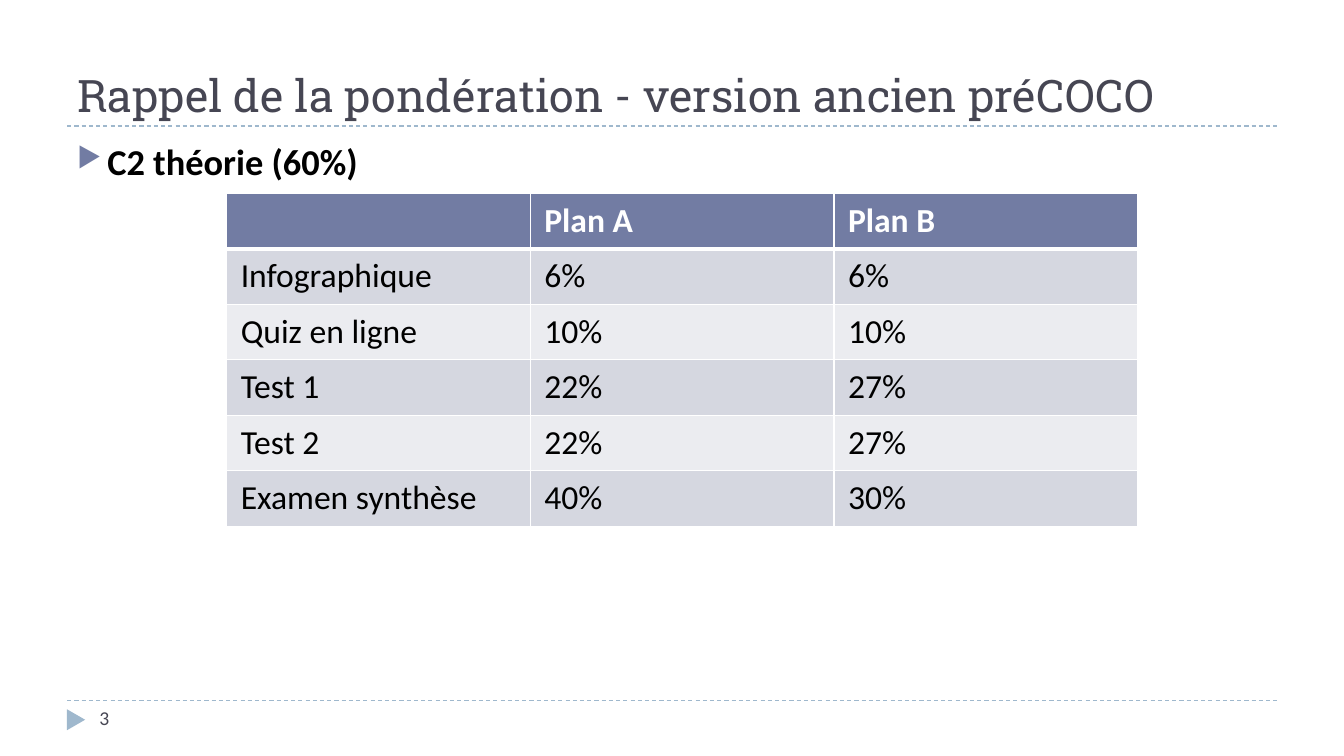
"""Builds the slide that recalls the weighting of the course grades."""
import pptx
import pptx.dml.color
import pptx.enum.dml
import pptx.enum.shapes
import pptx.enum.text
import pptx.oxml
import pptx.oxml.ns
import pptx.util

Pt = pptx.util.Pt

TITLE = "Rappel de la pondération - version ancien préCOCO"
HEADING = "C2 théorie (60%)"
PAGE_NUMBER = "3"
WEIGHTS = [
    ("", "Plan A", "Plan B"),
    ("Infographique", "6%", "6%"),
    ("Quiz en ligne", "10%", "10%"),
    ("Test 1", "22%", "27%"),
    ("Test 2", "22%", "27%"),
    ("Examen synthèse", "40%", "30%"),
]

WIDTH, HEIGHT = 960, 540
MARGIN = 48
RULE_TOPS = (90, 500.4)
TABLE_LEFT, TABLE_TOP = 162, 138.24
COLUMN_WIDTH, ROW_HEIGHT = 216.9, 39.6
INK, ACCENT, PALE_BLUE, WHITE, BLACK = "464653", "727CA3", "9FB8CD", "FFFFFF", "000000"
BANDS = ("EBECF0", "D5D7E0")
NAMESPACE = pptx.oxml.ns.nsdecls("a")


def paint(target, color):
    target.solid()
    target.fore_color.rgb = pptx.dml.color.RGBColor.from_string(color)


def write(para, text, size, color, font="Calibri", bold=False):
    span = para.add_run()
    span.text = text
    span.font.name, span.font.size, span.font.bold = font, Pt(size), bold
    paint(span.font.fill, color)


def add_text(page, left, top, width, height, anchor="TOP"):
    box = page.shapes.add_textbox(Pt(left), Pt(top), Pt(width), Pt(height))
    box.text_frame.word_wrap = True
    box.text_frame.vertical_anchor = pptx.enum.text.MSO_ANCHOR[anchor]
    return box.text_frame.paragraphs[0]


def add_rule(page, top):
    rule = page.shapes.add_connector(
        pptx.enum.shapes.MSO_CONNECTOR.STRAIGHT, Pt(MARGIN), Pt(top), Pt(WIDTH - MARGIN), Pt(top))
    paint(rule.line.fill, PALE_BLUE)
    rule.line.width = Pt(0.75)
    rule.line.dash_style = pptx.enum.dml.MSO_LINE.DASH
    rule._element.spPr.append(pptx.oxml.parse_xml(f"<a:effectLst {NAMESPACE}/>"))


def add_bullet(para):
    para.space_before = Pt(6)
    properties = para._p.get_or_add_pPr()
    properties.set("marL", str(Pt(21.6)))
    properties.set("indent", str(-Pt(21.6)))
    for markup in (
        f'<a:buClr {NAMESPACE}><a:srgbClr val="{ACCENT}"/></a:buClr>',
        f'<a:buSzPct {NAMESPACE} val="76000"/>',
        f'<a:buChar {NAMESPACE} char="▶"/>',
    ):
        properties.append(pptx.oxml.parse_xml(markup))


def add_borders(cell, bottom):
    properties = cell._tc.get_or_add_tcPr()
    for place, (side, width) in enumerate(zip("LRTB", (1, 1, 1, bottom))):
        properties.insert(place, pptx.oxml.parse_xml(
            f'<a:ln{side} {NAMESPACE} w="{Pt(width)}"><a:solidFill>'
            f'<a:srgbClr val="{WHITE}"/></a:solidFill></a:ln{side}>'))


def add_weights(page):
    rows, columns = len(WEIGHTS), len(WEIGHTS[0])
    table = page.shapes.add_table(
        rows, columns, Pt(TABLE_LEFT), Pt(TABLE_TOP),
        Pt(columns * COLUMN_WIDTH), Pt(rows * ROW_HEIGHT)).table
    for column in table.columns:
        column.width = Pt(COLUMN_WIDTH)
    for number, texts in enumerate(WEIGHTS):
        header = number == 0
        table.rows[number].height = Pt(ROW_HEIGHT)
        for cell, text in zip(table.rows[number].cells, texts):
            cell.margin_left = cell.margin_right = Pt(10)
            cell.margin_top = cell.margin_bottom = Pt(5)
            paint(cell.fill, ACCENT if header else BANDS[number % 2])
            add_borders(cell, 3 if header or number == 0 else 1)
            if text:
                write(cell.text_frame.paragraphs[0], text, 24,
                      WHITE if header else BLACK, bold=header)


def main():
    deck = pptx.Presentation()
    deck.slide_width, deck.slide_height = Pt(WIDTH), Pt(HEIGHT)
    page = deck.slides.add_slide(deck.slide_layouts[6])
    for top in RULE_TOPS:
        add_rule(page, top)
    marker = page.shapes.add_shape(
        pptx.enum.shapes.MSO_SHAPE.ISOSCELES_TRIANGLE, Pt(46.8), Pt(507.6), Pt(15), Pt(13))
    marker.rotation = 90
    marker.shadow.inherit = False
    paint(marker.fill, PALE_BLUE)
    marker.line.fill.background()

    content_width = WIDTH - 2 * MARGIN
    write(add_text(page, MARGIN, 12, content_width, 78, "BOTTOM"), TITLE, 32, INK, "Roboto Slab")
    write(add_text(page, 64, 500.4, 208, 28.8), PAGE_NUMBER, 14, INK)
    heading = add_text(page, MARGIN, 96, content_width, 389)
    add_bullet(heading)
    write(heading, HEADING, 26, BLACK, bold=True)
    add_weights(page)
    deck.save("out.pptx")


if __name__ == "__main__":
    main()
